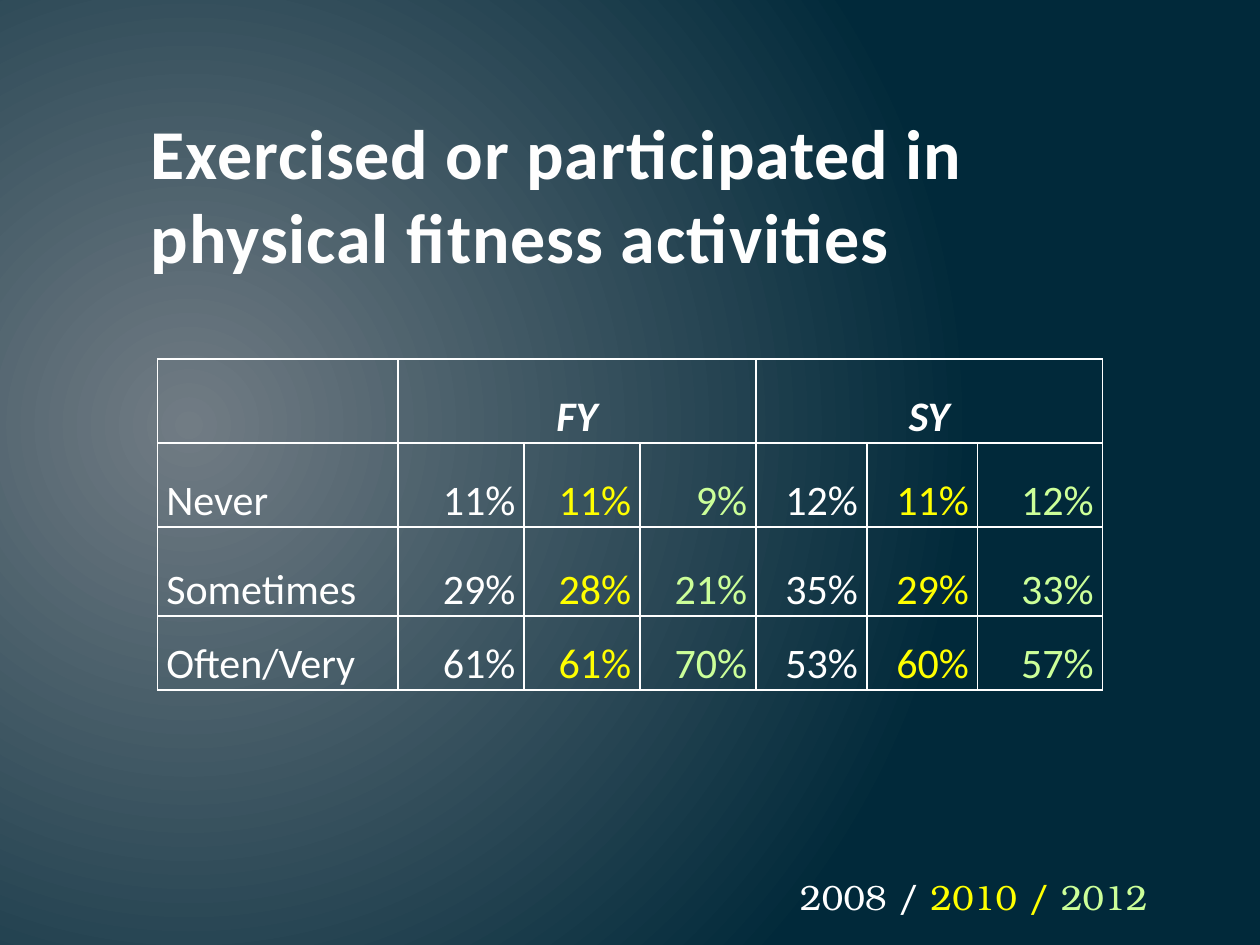
import dataclasses
import itertools

import pptx
import pptx.dml.color
import pptx.enum.text
import pptx.oxml
import pptx.oxml.ns
import pptx.util

ALIGN = pptx.enum.text.PP_ALIGN
ANCHOR = pptx.enum.text.MSO_ANCHOR


@dataclasses.dataclass(frozen=True)
class Theme:
    """Colours, fonts and type sizes of the deck."""
    glow: str = "717C84"
    night: str = "01293A"
    heading: str = "FEFEFE"
    heading_edge: str = "384F55"
    rule: str = "FFFFFF"
    years: tuple = ("FFFFFF", "FFFF00", "CCFF99")
    body_font: str = "Calibri"
    legend_font: str = "TeX Gyre Bonum"
    heading_size: float = 40
    table_size: float = 24
    legend_size: float = 20


@dataclasses.dataclass(frozen=True)
class Box:
    """A region measured in EMU."""
    left: int
    top: int
    width: int
    height: int

    def share(self, left, top, width, height):
        """Return the part of this box given by shares of its size."""
        return Box(self.left + round(left * self.width), self.top + round(top * self.height),
                   round(width * self.width), round(height * self.height))


THEME = Theme()
GROUPS = ("FY", "SY")
ANSWERS = (
    ("Never", "11%", "11%", "9%", "12%", "11%", "12%"),
    ("Sometimes", "29%", "28%", "21%", "35%", "29%", "33%"),
    ("Often/Very", "61%", "61%", "70%", "53%", "60%", "57%"),
)
COLUMN_PARTS = (1.91, 1, 0.92, 0.92, 0.88, 0.88, 0.99)
ROW_PARTS = (0.67, 0.67, 0.71, 0.59)


def xml(markup):
    """Parse markup whose root is an element of the drawing namespace."""
    head, mark, tail = markup.partition(">")
    slash = "/" if head.endswith("/") else ""
    return pptx.oxml.parse_xml(
        f"{head.removesuffix('/')} {pptx.oxml.ns.nsdecls('a')}{slash}{mark}{tail}")


def line_xml(side, points, colour):
    """Return a solid line element."""
    return xml(f'<a:{side} w="{pptx.util.Pt(points)}"><a:solidFill>'
               f'<a:srgbClr val="{colour}"/></a:solidFill></a:{side}>')


def add_run(paragraph, text, font, size, colour, bold=False, italic=False):
    """Append one styled run."""
    run = paragraph.add_run()
    run.text = text
    run.font.name = font
    run.font.size = pptx.util.Pt(size)
    run.font.color.rgb = pptx.dml.color.RGBColor.from_string(colour)
    run.font.bold = bold
    run.font.italic = italic
    return run


def add_text_frame(slide, box):
    """Add a wrapping text box and return its frame."""
    frame = slide.shapes.add_textbox(box.left, box.top, box.width, box.height).text_frame
    frame.word_wrap = True
    return frame


def paint_background(slide):
    """Fill the slide with a glow centred at the left."""
    fill = slide.background.fill
    fill.gradient()
    for stop, colour in zip(fill.gradient_stops, (THEME.glow, THEME.night)):
        stop.color.rgb = pptx.dml.color.RGBColor.from_string(colour)
    direction = slide.element.xpath(".//p:bg//a:lin")[0]
    direction.getparent().replace(direction, xml(
        '<a:path path="circle">'
        '<a:fillToRect l="15000" t="50000" r="85000" b="60000"/></a:path>'))


def add_heading(slide, box):
    """Place the question at the foot of its box."""
    frame = add_text_frame(slide, box)
    frame.vertical_anchor = ANCHOR.BOTTOM
    run = add_run(frame.paragraphs[0], "Exercised or participated in physical fitness activities",
                  THEME.body_font, THEME.heading_size, THEME.heading, bold=True)
    properties = run.font._element
    properties.set("spc", "50")
    properties.insert(0, line_xml("ln", 1.05, THEME.heading_edge))


def style_cell(cell):
    """Give a cell its rules, insets and clear fill."""
    cell.margin_left = cell.margin_right = pptx.util.Inches(0.07)
    cell.margin_top = cell.margin_bottom = 0
    cell.vertical_anchor = ANCHOR.BOTTOM
    properties = cell._tc.get_or_add_tcPr()
    for side in ("lnL", "lnR", "lnT", "lnB"):
        properties.append(line_xml(side, 1, THEME.rule))
    cell.fill.background()


def write_cell(cell, text, align, colour, **style):
    """Write one run into a cell."""
    paragraph = cell.text_frame.paragraphs[0]
    paragraph.alignment = align
    paragraph.line_spacing = 1.15
    add_run(paragraph, text, THEME.body_font, THEME.table_size, colour, **style)


def add_answers(slide, box):
    """Place the answer shares by class group and year."""
    table = slide.shapes.add_table(len(ROW_PARTS), len(COLUMN_PARTS),
                                   box.left, box.top, box.width, box.height).table
    table.first_row = table.horz_banding = False
    for column, part in zip(table.columns, COLUMN_PARTS):
        column.width = round(box.width * part / sum(COLUMN_PARTS))
    for row, part in zip(table.rows, ROW_PARTS):
        row.height = round(box.height * part / sum(ROW_PARTS))
    for cell in table.iter_cells():
        style_cell(cell)
    span = len(THEME.years)
    for index, group in enumerate(GROUPS):
        first = 1 + index * span
        table.cell(0, first).merge(table.cell(0, first + span - 1))
        write_cell(table.cell(0, first), group, ALIGN.CENTER, THEME.rule, bold=True, italic=True)
    for row, (answer, *shares) in enumerate(ANSWERS, 1):
        write_cell(table.cell(row, 0), answer, ALIGN.LEFT, THEME.rule)
        colours = itertools.cycle(THEME.years)
        for column, (share, colour) in enumerate(zip(shares, colours), 1):
            write_cell(table.cell(row, column), share, ALIGN.RIGHT, colour)


def add_year_legend(slide, box):
    """Place the colour key of the survey years."""
    paragraph = add_text_frame(slide, box).paragraphs[0]
    for year, colour in zip(("2008 / ", "2010 / ", "2012"), THEME.years):
        add_run(paragraph, year, THEME.legend_font, THEME.legend_size, colour)


def main():
    """Build and save the slide."""
    deck = pptx.Presentation()
    deck.slide_width = pptx.util.Inches(10)
    deck.slide_height = pptx.util.Inches(7.5)
    page = Box(0, 0, deck.slide_width, deck.slide_height)
    slide = deck.slides.add_slide(deck.slide_layouts[6])
    paint_background(slide)
    add_heading(slide, page.share(0.11, 0.07, 0.76, 0.23))
    add_answers(slide, page.share(0.125, 0.38, 0.75, 0.35))
    add_year_legend(slide, page.share(0.625, 0.92, 0.32, 0.06))
    deck.save("out.pptx")


if __name__ == "__main__":
    main()
